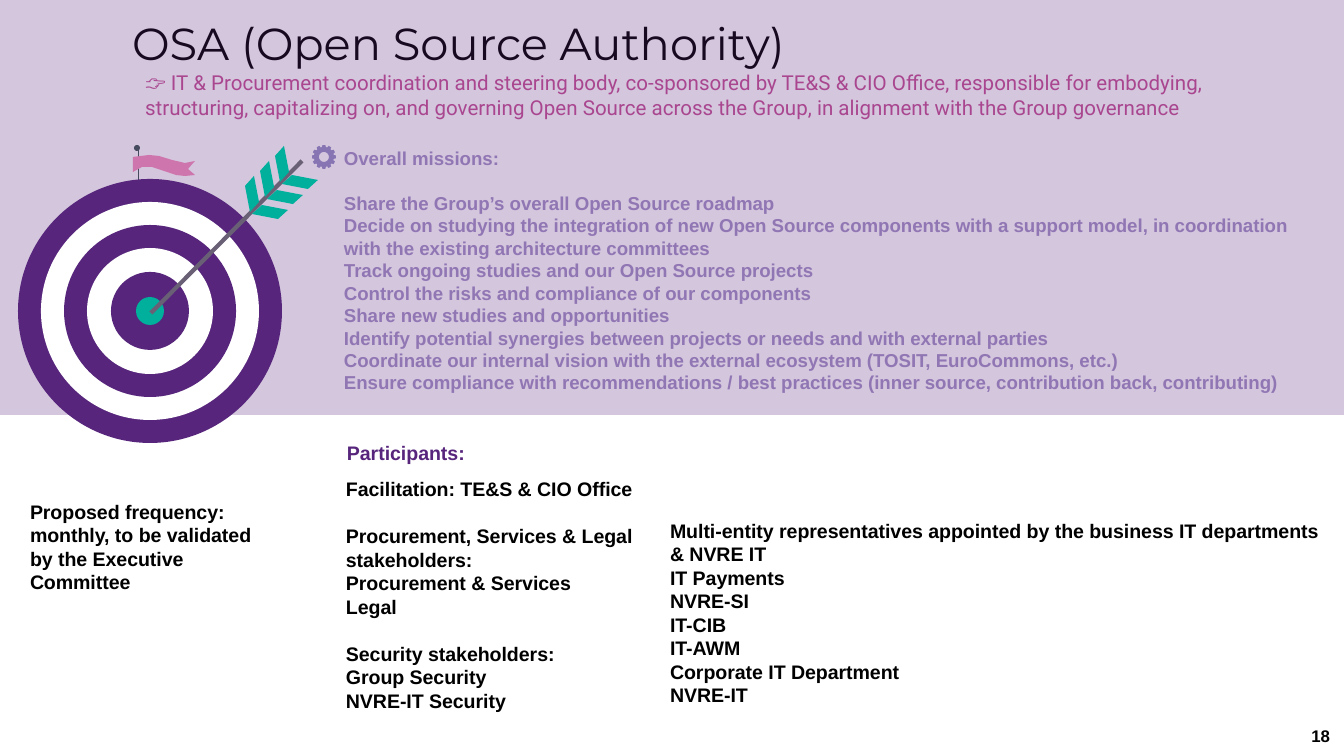
from math import cos, radians, sin

from lxml.etree import SubElement
from pptx import Presentation
from pptx.dml.color import RGBColor
from pptx.enum.shapes import MSO_CONNECTOR, MSO_SHAPE
from pptx.enum.text import MSO_ANCHOR, MSO_AUTO_SIZE, PP_ALIGN
from pptx.oxml.ns import qn
from pptx.util import Emu, Pt

BLACK = RGBColor(0x00, 0x00, 0x00)
WHITE = RGBColor(0xFF, 0xFF, 0xFF)
PURPLE = RGBColor(0x57, 0x26, 0x7C)
LILAC = RGBColor(0x91, 0x76, 0xB4)
GEAR = RGBColor(0x86, 0x74, 0xB3)
MAGENTA = RGBColor(0xA9, 0x46, 0x8F)
PINK = RGBColor(0xCF, 0x75, 0xAD)
TEAL = RGBColor(0x00, 0xAF, 0x9C)
SHAFT = RGBColor(0x69, 0x60, 0x76)
SLATE = RGBColor(0x46, 0x4B, 0x5F)

WIDTH, HEIGHT = 1344, 756
SCALE = 9144000 / WIDTH


def px(n):
    return Emu(round(n * SCALE))


class Deck:
    font = "Arial"
    leading = 1.2

    def __init__(self):
        self.prs = Presentation()
        self.prs.slide_width, self.prs.slide_height = px(WIDTH), px(HEIGHT)
        self.s = self.prs.slides.add_slide(self.prs.slide_layouts[5])

    def paint(self, sp, color, alpha=None):
        sp.shadow.inherit = False
        sp.fill.solid()
        sp.fill.fore_color.rgb = color
        sp.line.fill.background()
        if alpha:
            clr = sp._element.spPr.find(qn("a:solidFill"))[0]
            SubElement(clr, qn("a:alpha")).set("val", str(alpha * 1000))

    def band(self, x, y, w, h, color, alpha):
        sp = self.s.shapes.add_shape(
            MSO_SHAPE.ROUND_2_SAME_RECTANGLE, px(x), px(y), px(w), px(h))
        sp.adjustments[0] = 0
        self.paint(sp, color, alpha)

    def disc(self, cx, cy, radius, color):
        sp = self.s.shapes.add_shape(
            MSO_SHAPE.OVAL, px(cx - radius), px(cy - radius), px(2 * radius), px(2 * radius))
        self.paint(sp, color)

    def line(self, x1, y1, x2, y2, color, width):
        c = self.s.shapes.add_connector(
            MSO_CONNECTOR.STRAIGHT, px(x1), px(y1), px(x2), px(y2))
        c.line.color.rgb = color
        c.line.width = Pt(width)
        SubElement(c._element.spPr, qn("a:effectLst"))

    def polygon(self, color, *contours):
        fb = None
        for contour in contours:
            start, *rest = [(px(x), px(y)) for x, y in contour]
            if fb is None:
                fb = self.s.shapes.build_freeform(*start)
            else:
                fb.move_to(*start)
            fb.add_line_segments(rest)
        self.paint(fb.convert_to_shape(), color)

    def fill_text(self, tf, lines, size, color, font=None, bold=True, indent=0,
                  gaps=(), insets=(13, 7), align=PP_ALIGN.LEFT, wrap=True, spacing=None):
        tf.word_wrap = wrap
        tf.auto_size = MSO_AUTO_SIZE.NONE
        tf.vertical_anchor = MSO_ANCHOR.TOP
        tf.margin_left = tf.margin_right = px(insets[0])
        tf.margin_top = tf.margin_bottom = px(insets[1])
        for i, line in enumerate(lines):
            p = tf.add_paragraph() if i else tf.paragraphs[0]
            p.alignment = align
            if indent:
                p._p.get_or_add_pPr().set("marL", str(px(indent)))
            if i in gaps:
                p.space_before = Pt(round(size * self.leading, 1))
            if spacing:
                p.line_spacing = spacing
            r = p.add_run()
            r.text = line
            r.font.name = font or self.font
            r.font.size = Pt(size)
            r.font.bold = bold
            r.font.color.rgb = color

    def text(self, x, y, w, h, lines, size, color, **style):
        sp = self.s.shapes.add_textbox(px(x), px(y), px(w), px(h))
        self.fill_text(sp.text_frame, lines, size, color, **style)

    def title(self, x, y, w, h, line, size, color, **style):
        sp = self.s.shapes.title
        sp.left, sp.top, sp.width, sp.height = px(x), px(y), px(w), px(h)
        self.fill_text(sp.text_frame, [line], size, color, **style)


def polar(cx, cy, radius, angle):
    return cx + radius * cos(radians(angle)), cy + radius * sin(radians(angle))


def draw_target(deck):
    deck.line(138, 345, 138, 149, SLATE, 0.45)
    deck.disc(137, 148, 3, SLATE)
    deck.polygon(PINK, [
        (195, 161), (185, 163), (172, 160), (159, 156), (149, 155), (133, 157),
        (133, 172), (142, 167), (152, 167), (167, 172), (176, 175), (185, 176),
        (195, 175), (188, 169)])
    rings = zip((132, 109, 86, 63, 39, 14), (PURPLE, WHITE, PURPLE, WHITE, PURPLE, TEAL))
    for radius, color in rings:
        deck.disc(150, 311, radius, color)
    deck.line(151, 313, 302, 161, SHAFT, 2.25)
    feather = [(308, 189), (282, 184), (292, 175), (318, 180)]
    for step in (0, 15, 30):
        lower = [(x - step, y + step) for x, y in feather]
        deck.polygon(TEAL, lower)
        deck.polygon(TEAL, [(464 - y, 464 - x) for x, y in lower])


def draw_gear(deck, cx, cy):
    tooth = ((10, -11), (12, -7), (12, 7), (10, 11))
    rim = [polar(cx, cy, radius, base + turn)
           for base in range(0, 360, 30) for radius, turn in tooth]
    hole = [polar(cx, cy, 5, angle) for angle in range(360, 0, -15)]
    deck.polygon(GEAR, rim, hole)


def main():
    deck = Deck()
    deck.band(0, 0, WIDTH, 415, PURPLE, 26)
    draw_target(deck)
    draw_gear(deck, 324, 157)
    deck.title(132, 15, 1133, 50, "OSA (Open Source Authority)", 24, BLACK,
               font="Montserrat", bold=False, insets=(0, 7), spacing=0.9)
    deck.text(132, 63, 1163, 67, [
        "👉 IT & Procurement coordination and steering body, co-sponsored by TE&S & CIO Office, "
        "responsible for embodying, structuring, capitalizing on, and governing Open Source "
        "across the Group, in alignment with the Group governance",
    ], 11, MAGENTA, font="Roboto", bold=False)
    deck.text(267, 142, 1059, 282, [
        "Overall missions:",
        "Share the Group’s overall Open Source roadmap",
        "Decide on studying the integration of new Open Source components with a support model, "
        "in coordination with the existing architecture committees",
        "Track ongoing studies and our Open Source projects",
        "Control the risks and compliance of our components",
        "Share new studies and opportunities",
        "Identify potential synergies between projects or needs and with external parties",
        "Coordinate our internal vision with the external ecosystem (TOSIT, EuroCommons, etc.)",
        "Ensure compliance with recommendations / best practices "
        "(inner source, contribution back, contributing)",
    ], 10, LILAC, indent=67, gaps=(1,), insets=(10, 5))
    deck.text(267, 434, 372, 60, ["Participants:"], 10.5, PURPLE, indent=67)
    deck.text(212, 477, 427, 285, [
        "Facilitation: TE&S & CIO Office",
        "Procurement, Services & Legal stakeholders:",
        "Procurement & Services",
        "Legal",
        "Security stakeholders:",
        "Group Security",
        "NVRE-IT Security",
    ], 10.5, BLACK, indent=134, gaps=(1, 4), insets=(0, 0))
    deck.text(657, 512, 687, 227, [
        "Multi-entity representatives appointed by the business IT departments & NVRE IT",
        "IT Payments",
        "NVRE-SI",
        "IT-CIB",
        "IT-AWM",
        "Corporate IT Department",
        "NVRE-IT",
    ], 10.5, BLACK)
    deck.text(17, 493, 262, 149, [
        "Proposed frequency: monthly, to be validated by the Executive Committee",
    ], 10.5, BLACK)
    deck.text(1299, 726, 31, 20, ["18"], 9, BLACK,
              insets=(0, 0), align=PP_ALIGN.RIGHT, wrap=False)
    deck.prs.save("out.pptx")


if __name__ == "__main__":
    main()
